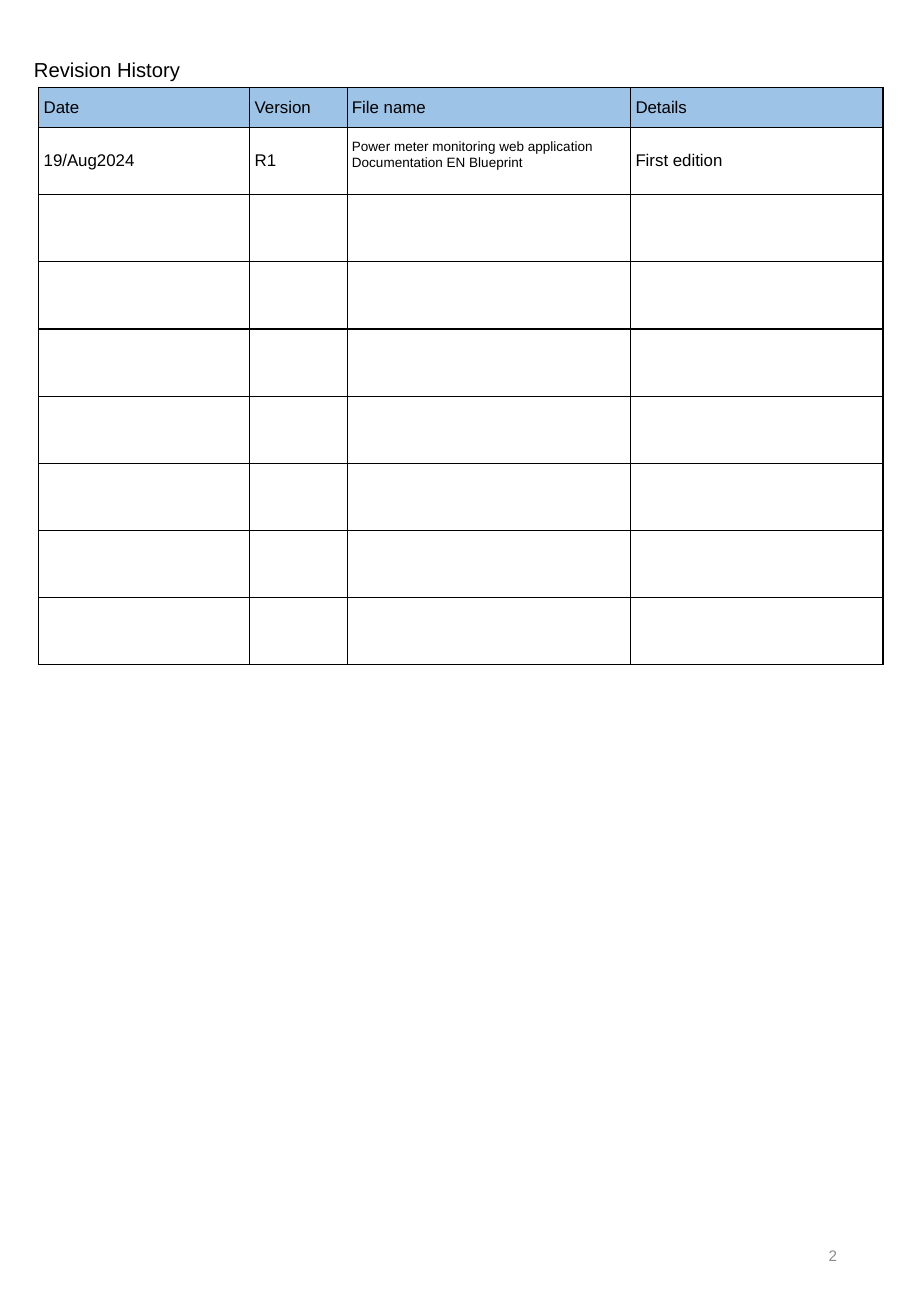
import pptx
import pptx.dml.color
import pptx.enum.text
import pptx.oxml
import pptx.oxml.ns
import pptx.util
from dataclasses import dataclass

SCALE = 2286  # EMU per px, 400 px to the inch


@dataclass(frozen=True)
class Theme:
    font: str = "Arial"
    ink: str = "000000"
    muted: str = "8C8C8C"
    head: str = "9DC3E6"
    paper: str = "FFFFFF"
    title: int = 12
    body: int = 10
    small: int = 8
    folio: int = 9
    rule: float = 0.75


def px(n):
    return pptx.util.Emu(n * SCALE)


def rgb(code):
    return pptx.dml.color.RGBColor.from_string(code)


class Page:
    def __init__(self, deck, theme):
        self.theme = theme
        self.slide = deck.slides.add_slide(deck.slide_layouts[6])

    def style(self, par, size, color):
        par.font.name = self.theme.font
        par.font.size = pptx.util.Pt(size)
        par.font.color.rgb = rgb(color)

    def text(self, box, words, size, color, align="LEFT", inset=40):
        frame = self.slide.shapes.add_textbox(*map(px, box)).text_frame
        frame.word_wrap = True
        frame.margin_left = px(inset)
        frame.vertical_anchor = pptx.enum.text.MSO_ANCHOR.MIDDLE
        par = frame.paragraphs[0]
        par.text = words
        par.alignment = pptx.enum.text.PP_ALIGN[align]
        self.style(par, size, color)

    def border(self, cell):
        props = cell._tc.get_or_add_tcPr()
        space = pptx.oxml.ns.nsdecls("a")
        width = int(pptx.util.Pt(self.theme.rule))
        for side in "LRTB":
            props.append(pptx.oxml.parse_xml(
                f'<a:ln{side} {space} w="{width}"><a:solidFill>'
                f'<a:srgbClr val="{self.theme.ink}"/></a:solidFill></a:ln{side}>'))

    def cell(self, cell, words, fill, size, foot=20):
        self.border(cell)
        cell.fill.solid()
        cell.fill.fore_color.rgb = rgb(fill)
        cell.vertical_anchor = pptx.enum.text.MSO_ANCHOR.MIDDLE
        cell.margin_left, cell.margin_right = px(16), px(40)
        cell.margin_top, cell.margin_bottom = px(20), px(foot)
        cell.text = words
        for par in cell.text_frame.paragraphs:
            self.style(par, size, self.theme.ink)

    def table(self, left, top, widths, heights, rows):
        grid = self.slide.shapes.add_table(
            len(heights), len(widths), px(left), px(top),
            px(sum(widths)), px(sum(heights))).table
        grid.first_row = grid.horz_banding = False
        for col, width in zip(grid.columns, widths):
            col.width = px(width)
        for row, height in zip(grid.rows, heights):
            row.height = px(height)
        for r, row in enumerate(grid.rows):
            texts = rows[r] if r < len(rows) else [""] * len(widths)
            fill = self.theme.paper if r else self.theme.head
            for cell, words in zip(row.cells, texts):
                # Two-line entries are smaller and sit a little higher
                long = "\n" in words
                size = self.theme.small if long else self.theme.body
                self.cell(cell, words, fill, size, 62 if long else 20)


def main():
    deck = pptx.Presentation()
    deck.slide_width, deck.slide_height = px(3000), px(4332)
    theme = Theme()
    page = Page(deck, theme)

    # Heading
    page.text((48, 168, 624, 120), "Revision History",
              theme.title, theme.ink, inset=64)

    # Revision table: header, first edition, seven empty rows
    page.table(128, 288, [695, 320, 934, 831], [132] + [221] * 8, [
        ["Date", "Version", "File name", "Details"],
        ["19/Aug2024", "R1",
         "Power meter monitoring web application\nDocumentation EN Blueprint",
         "First edition"],
    ])

    # Page number
    page.text((2120, 4016, 676, 232), "2", theme.folio, theme.muted, "RIGHT")

    deck.save("out.pptx")


if __name__ == "__main__":
    main()
